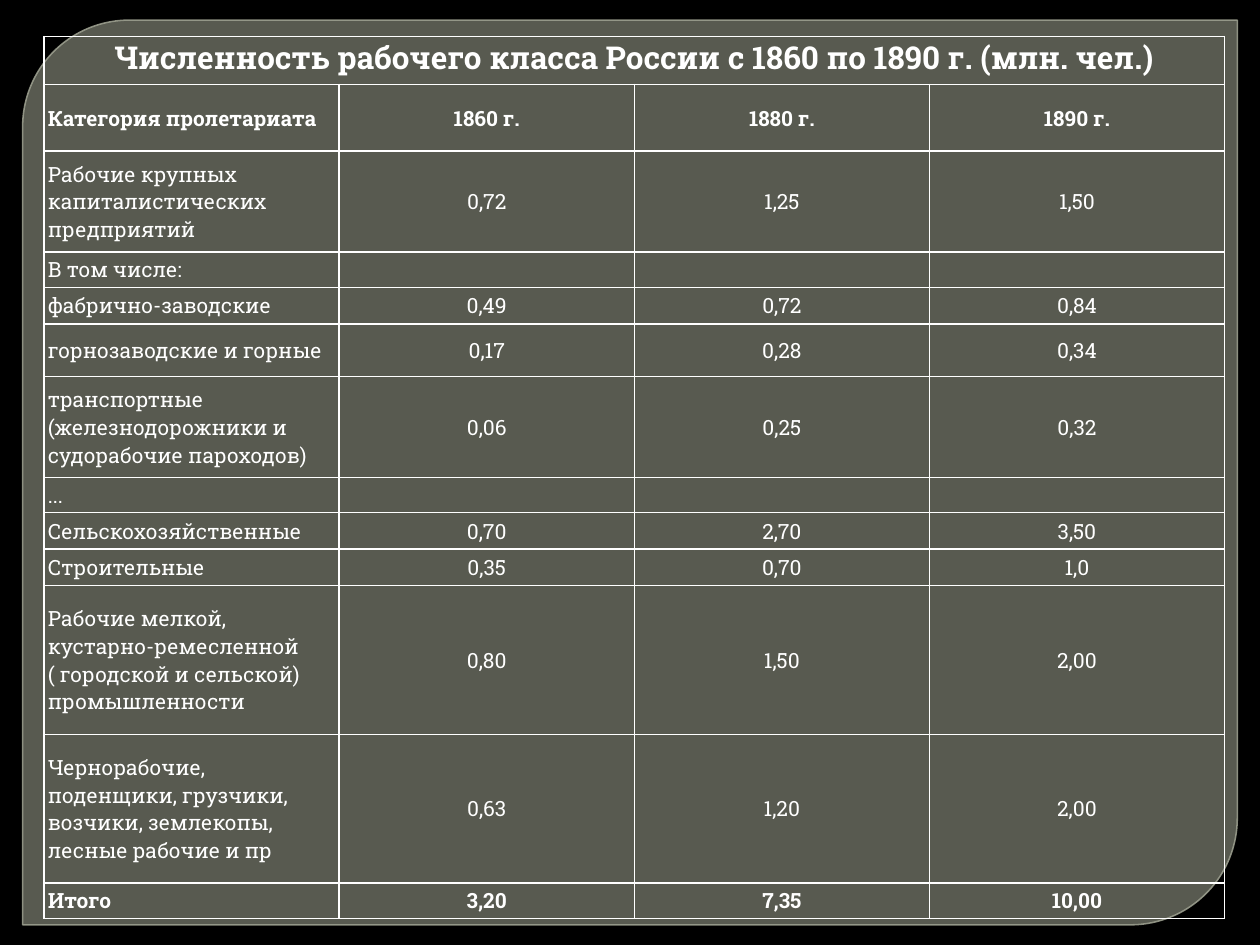
from lxml import etree
from pptx import Presentation
from pptx.dml.color import RGBColor
from pptx.enum import shapes, text
from pptx.oxml.ns import qn
from pptx.util import Inches, Pt

BLACK = RGBColor(0x00, 0x00, 0x00)
WHITE = RGBColor(0xFF, 0xFF, 0xFF)
PANEL_FILL = RGBColor(0x88, 0x8B, 0x7B)
PANEL_LINE = RGBColor(0x9D, 0xA0, 0x90)
FONT = "Roboto Slab"
BODY_SIZE = Pt(12)

TITLE = "Численность рабочего класса России с 1860 по 1890 г. (млн. чел.)"
# Row height in inches, then the texts of the row
ROWS = [
    (0.38, [TITLE]),
    (0.53, ["Категория пролетариата", "1860 г.", "1880 г.", "1890 г."]),
    (0.8, ["Рабочие крупных капиталистических предприятий", "0,72", "1,25", "1,50"]),
    (0.28, ["В том числе:"]),
    (0.29, ["фабрично-заводские", "0,49", "0,72", "0,84"]),
    (0.42, ["горнозаводские и горные", "0,17", "0,28", "0,34"]),
    (0.8, ["транспортные (железнодорожники и судорабочие пароходов)",
           "0,06", "0,25", "0,32"]),
    (0.28, ["..."]),
    (0.29, ["Сельскохозяйственные", "0,70", "2,70", "3,50"]),
    (0.29, ["Строительные", "0,35", "0,70", "1,0"]),
    (1.18, ["Рабочие мелкой, кустарно-ремесленной ( городской и сельской) промышленности",
            "0,80", "1,50", "2,00"]),
    (1.18, ["Чернорабочие, поденщики, грузчики, возчики, землекопы, лесные рабочие и пр",
            "0,63", "1,20", "2,00"]),
    (0.28, ["Итого", "3,20", "7,35", "10,00"]),
]
COLUMNS = 4
BOLD_ROWS = {0, 1, len(ROWS) - 1}


def set_alpha(color_format_parent, percent):
    """Make the solid colour below an XML element partly transparent."""
    color = color_format_parent.find(qn("a:solidFill"))[0]
    etree.SubElement(color, qn("a:alpha")).set("val", str(percent * 1000))


def add_panel(slide):
    panel = slide.shapes.add_shape(
        shapes.MSO_SHAPE.ROUND_2_DIAG_RECTANGLE,
        Inches(0.18), Inches(0.16), Inches(9.64), Inches(7.18))
    panel.adjustments[0] = 0.118
    panel.adjustments[1] = 0
    panel.shadow.inherit = False
    panel.fill.solid()
    panel.fill.fore_color.rgb = PANEL_FILL
    panel.line.color.rgb = PANEL_LINE
    panel.line.width = Pt(0.87)
    properties = panel.fill._xPr
    set_alpha(properties, 65)
    set_alpha(properties.find(qn("a:ln")), 88)


def add_borders(cell):
    properties = cell._tc.get_or_add_tcPr()
    for position, side in enumerate(("lnL", "lnR", "lnT", "lnB")):
        border = etree.Element(qn(f"a:{side}"), w=str(Pt(1)))
        fill = etree.SubElement(border, qn("a:solidFill"))
        etree.SubElement(fill, qn("a:srgbClr"), val=str(WHITE))
        properties.insert(position, border)


def format_cell(cell, margins, anchor):
    for name, value in margins.items():
        setattr(cell, name, value)
    cell.vertical_anchor = anchor
    cell.fill.background()
    add_borders(cell)


def write_cell(cell, words, size, bold, align):
    paragraph = cell.text_frame.paragraphs[0]
    paragraph.alignment = align
    if not words:
        # An empty cell needs a small end mark, or it stretches its row
        etree.SubElement(paragraph._p, qn("a:endParaRPr"), sz=str(int(size.pt * 100)))
        return
    run = paragraph.add_run()
    run.text = words
    style = {"name": FONT, "size": size, "bold": bold}
    for name, value in style.items():
        setattr(run.font, name, value)
    run.font.color.rgb = WHITE


def add_workers_table(slide):
    table = slide.shapes.add_table(
        len(ROWS), COLUMNS, Inches(0.35), Inches(0.29), Inches(9.37), Inches(7.01)).table
    table.first_row = False
    table.horz_banding = False
    sides = ("margin_left", "margin_right", "margin_top", "margin_bottom")
    title_margins = dict.fromkeys(sides, 0)
    body_margins = dict(zip(sides, map(Inches, (0.03, 0.03, 0.01, 0.01))))
    for r, (height, words) in enumerate(ROWS):
        table.rows[r].height = Inches(height)
        is_title = r == 0
        for c in range(COLUMNS):
            cell = table.cell(r, c)
            format_cell(cell, title_margins if is_title else body_margins,
                        text.MSO_ANCHOR.TOP if is_title else text.MSO_ANCHOR.MIDDLE)
            centred = is_title or c > 0
            write_cell(cell, words[c] if c < len(words) else "",
                       Pt(18) if is_title and c == 0 else BODY_SIZE, r in BOLD_ROWS,
                       text.PP_ALIGN.CENTER if centred else text.PP_ALIGN.LEFT)
    table.cell(0, 0).merge(table.cell(0, COLUMNS - 1))


def main():
    deck = Presentation()
    deck.slide_width, deck.slide_height = Inches(10), Inches(7.5)
    slide = deck.slides.add_slide(deck.slide_layouts[6])
    slide.background.fill.solid()
    slide.background.fill.fore_color.rgb = BLACK
    add_panel(slide)
    add_workers_table(slide)
    deck.save("out.pptx")


if __name__ == "__main__":
    main()
